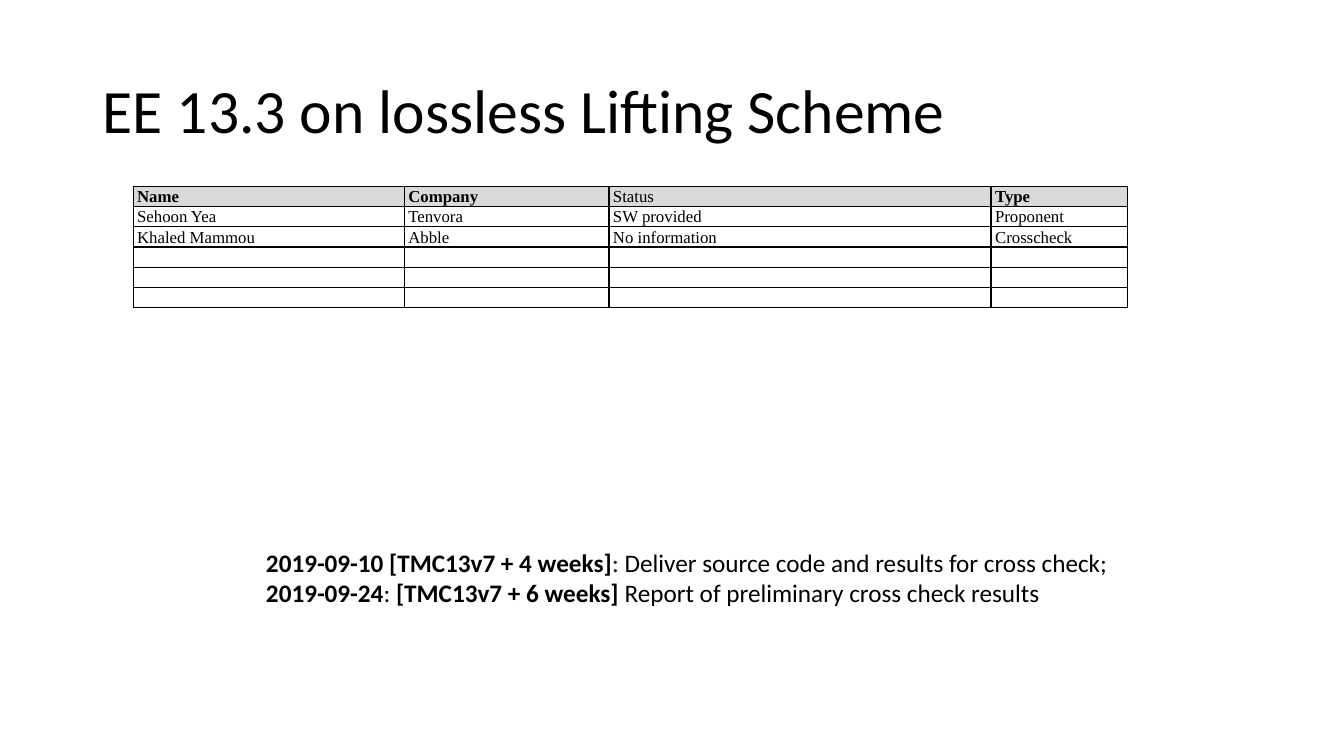
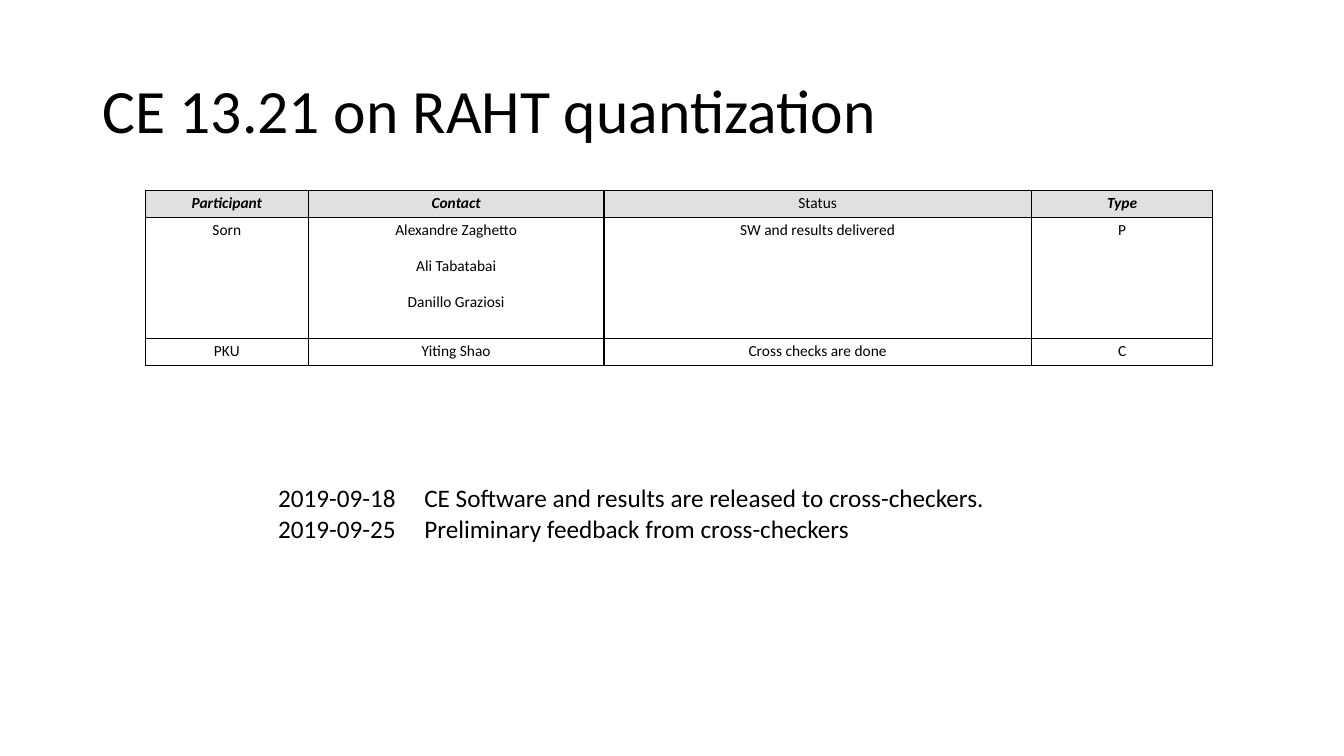
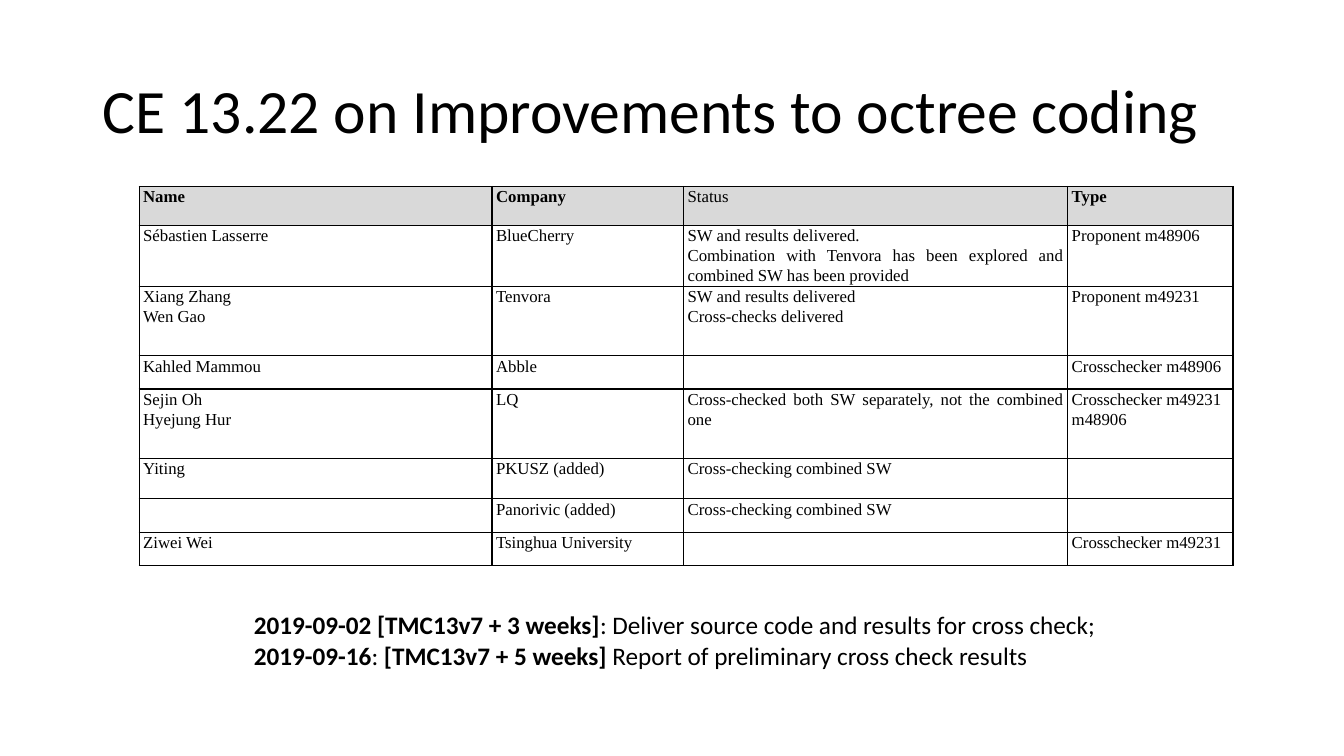
import pptx
import pptx.util
import pptx.dml.color
import pptx.enum.text
import pptx.oxml.ns
from lxml import etree

Inches = pptx.util.Inches
Pt = pptx.util.Pt
qn = pptx.oxml.ns.qn
ALIGN = pptx.enum.text.PP_ALIGN

BLACK = "000000"
SANS = "Calibri"
SERIF = "Times New Roman"
PLAIN = dict(face=SERIF, size=12, align=ALIGN.JUSTIFY, lead=1.07, after=0,
             pad=0.04, head="D9D9D9", slant=False)
FORMAL = dict(face=SANS, size=11, align=ALIGN.CENTER, lead=1.15, after=10,
              pad=0.05, head="E0E0E0", slant=True)


def paint(target, code):
    """Set a font colour or a solid fill from a hex string."""
    if hasattr(target, "solid"):
        target.solid()
        target = target.fore_color
    else:
        target = target.color
    target.rgb = pptx.dml.color.RGBColor.from_string(code)


def style(font, face, size):
    """Give a font its face, size and black colour."""
    font.name = face
    font.size = Pt(size)
    paint(font, BLACK)


def border(cell):
    """Draw a thin black line on all four sides of a cell."""
    props = cell._tc.get_or_add_tcPr()
    for spot, side in enumerate(("lnL", "lnR", "lnT", "lnB")):
        line = etree.Element(qn(f"a:{side}"), w=str(Pt(1)))
        fill = etree.SubElement(line, qn("a:solidFill"))
        etree.SubElement(fill, qn("a:srgbClr"), val=BLACK)
        props.insert(spot, line)


def write_cell(cell, text, look, top):
    """Fill one table cell, with a line of text for each paragraph."""
    cell.margin_left = cell.margin_right = Inches(look["pad"])
    cell.margin_top = cell.margin_bottom = 0
    if top:
        paint(cell.fill, look["head"])
    else:
        cell.fill.background()
    border(cell)
    cell.text = text
    strong = top and text != "Status"
    for para in cell.text_frame.paragraphs:
        para.alignment = look["align"]
        para.line_spacing = look["lead"]
        para.space_after = Pt(look["after"])
        style(para.font, look["face"], look["size"])
        para.font.bold = strong
        para.font.italic = strong and look["slant"]
        if not text:
            end = etree.SubElement(para._p, qn("a:endParaRPr"),
                                   sz=str(look["size"] * 100))
            etree.SubElement(end, qn("a:latin"), typeface=look["face"])


def add_grid(slide, left, top, widths, heights, rows, look):
    """Place a bordered table with a grey head row."""
    frame = slide.shapes.add_table(
        len(rows), len(widths), Inches(left), Inches(top),
        Inches(sum(widths)), Inches(sum(heights)))
    table = frame.table
    table.first_row = table.horz_banding = False
    for col, width in zip(table.columns, widths):
        col.width = Inches(width)
    for num, (row, height) in enumerate(zip(rows, heights)):
        table.rows[num].height = Inches(height)
        for spot, text in enumerate(row):
            write_cell(table.cell(num, spot), text, look, num == 0)


def add_dates(slide, left, top, width, lines, tab=None):
    """Place the dated steps; text between asterisks is bold."""
    box = slide.shapes.add_textbox(
        Inches(left), Inches(top), Inches(width), Inches(0.71))
    frame = box.text_frame
    frame.word_wrap = True
    for num, line in enumerate(lines):
        para = frame.add_paragraph() if num else frame.paragraphs[0]
        if tab:
            stops = etree.SubElement(para._p.get_or_add_pPr(), qn("a:tabLst"))
            etree.SubElement(stops, qn("a:tab"), pos=str(Inches(tab)), algn="l")
        style(para.font, SANS, 18)
        for spot, part in enumerate(line.split("*")):
            if part:
                run = para.add_run()
                run.text = part
                run.font.bold = spot % 2 == 1


def add_page(deck, text):
    """Add a slide with its title."""
    slide = deck.slides.add_slide(deck.slide_layouts[5])
    title = slide.shapes.title
    title.left, title.top = Inches(0.92), Inches(0.4)
    title.width, title.height = Inches(11.5), Inches(1.45)
    frame = title.text_frame
    frame.text = text
    frame.auto_size = pptx.enum.text.MSO_AUTO_SIZE.NONE
    frame.vertical_anchor = pptx.enum.text.MSO_ANCHOR.MIDDLE
    para = frame.paragraphs[0]
    para.alignment = ALIGN.LEFT
    para.line_spacing = 0.9
    style(para.font, SANS, 44)
    return slide


def weeks(first, start, second, stop):
    """Word the two steps that are counted in weeks."""
    return [
        f"*{first} [TMC13v7 + {start} weeks]*: "
        "Deliver source code and results for cross check;",
        f"*{second}*: *[TMC13v7 + {stop} weeks] *"
        "Report of preliminary cross check results",
    ]


def lifting(deck):
    """Build the slide on the lifting scheme."""
    slide = add_page(deck, "EE 13.3 on lossless Lifting Scheme")
    rows = [
        ("Name", "Company", "Status", "Type"),
        ("Sehoon Yea", "Tenvora", "SW provided", "Proponent"),
        ("Khaled Mammou", "Abble", "No information", "Crosscheck"),
    ] + [("",) * 4] * 3
    add_grid(slide, 1.32, 1.85, (2.69, 2.03, 3.79, 1.35), (0.2,) * 6,
             rows, PLAIN)
    add_dates(slide, 2.54, 5.38, 8.64,
              weeks("2019-09-10", 4, "2019-09-24", 6))


def quantize(deck):
    """Build the slide on quantization."""
    slide = add_page(deck, "CE 13.21 on RAHT quantization")
    rows = [
        ("Participant", "Contact", "Status", "Type"),
        ("Sorn", "Alexandre Zaghetto\nAli Tabatabai\nDanillo Graziosi",
         "SW and results delivered", "P"),
        ("PKU", "Yiting Shao", "Cross checks are done", "C"),
    ]
    add_grid(slide, 1.44, 1.89, (1.62, 2.93, 4.24, 1.8), (0.27, 1.2, 0.27),
             rows, FORMAL)
    add_dates(slide, 2.66, 4.74, 7.29, [
        "2019-09-18\tCE Software and results are released to cross-checkers.",
        "2019-09-25\tPreliminary feedback from cross-checkers",
    ], tab=1.45)


def octree(deck):
    """Build the slide on octree coding."""
    slide = add_page(deck, "CE 13.22 on Improvements to octree coding")
    rows = [
        ("Name", "Company", "Status", "Type"),
        ("Sébastien Lasserre", "BlueCherry",
         "SW and results delivered.\nCombination with Tenvora has been "
         "explored and combined SW has been provided", "Proponent m48906"),
        ("Xiang Zhang\nWen Gao", "Tenvora",
         "SW and results delivered\nCross-checks delivered",
         "Proponent m49231"),
        ("Kahled Mammou", "Abble", "", "Crosschecker m48906"),
        ("Sejin Oh\nHyejung Hur", "LQ",
         "Cross-checked both SW separately, not the combined one",
         "Crosschecker m49231\nm48906"),
        ("Yiting", "PKUSZ (added)", "Cross-checking combined SW", ""),
        ("", "Panorivic (added)", "Cross-checking combined SW", ""),
        ("Ziwei Wei", "Tsinghua University", "", "Crosschecker m49231"),
    ]
    add_grid(slide, 1.38, 1.85, (3.5, 1.9, 3.81, 1.64),
             (0.39, 0.6, 0.69, 0.33, 0.69, 0.4, 0.33, 0.33), rows, PLAIN)
    add_dates(slide, 2.42, 6, 8.64,
              weeks("2019-09-02", 3, "2019-09-16", 5))


def main():
    """Build and save the deck."""
    deck = pptx.Presentation()
    deck.slide_width, deck.slide_height = Inches(13.33), Inches(7.5)
    for build in (lifting, quantize, octree):
        build(deck)
    deck.save("out.pptx")


if __name__ == "__main__":
    main()
